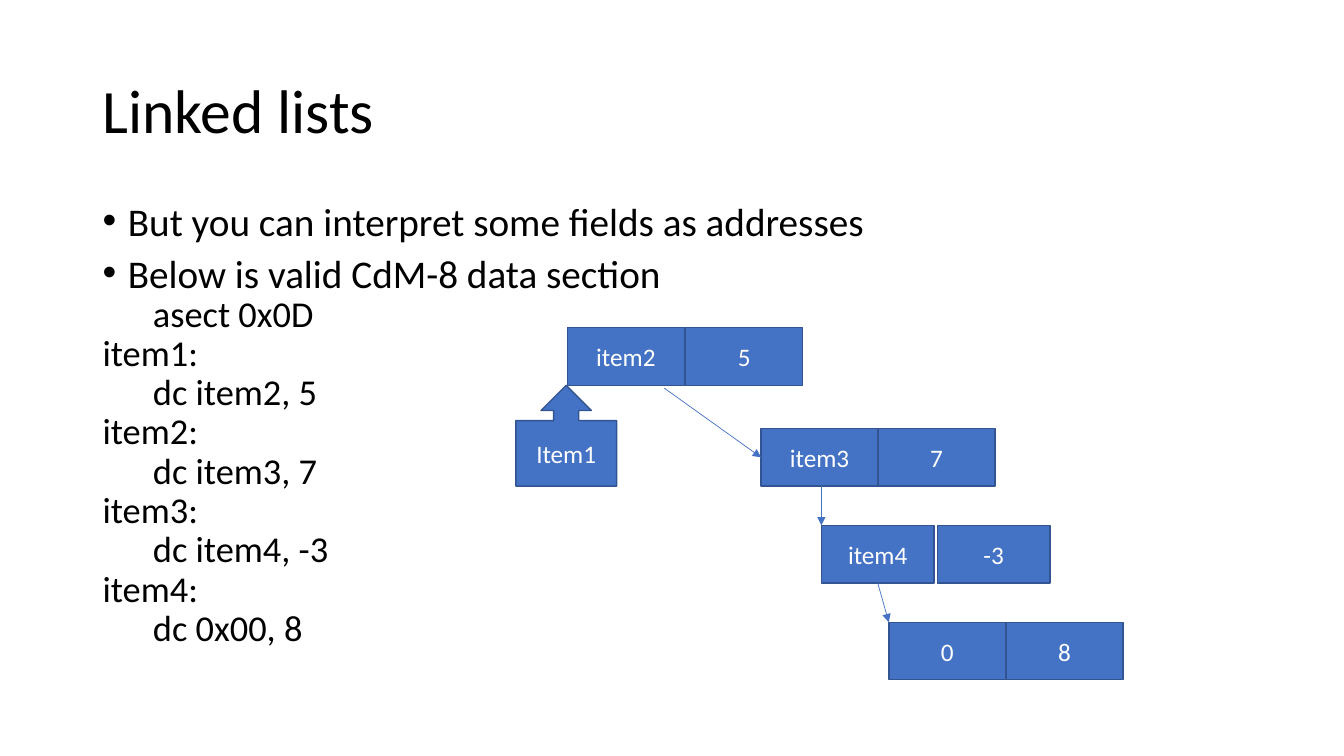
from lxml.etree import SubElement
from pptx import Presentation
from pptx.dml.color import RGBColor
from pptx.enum.shapes import MSO_CONNECTOR, MSO_SHAPE
from pptx.enum.text import MSO_ANCHOR, MSO_AUTO_SIZE, PP_ALIGN
from pptx.oxml.ns import qn
from pptx.util import Cm, Pt

COLOURS = {"text": "000000", "node": "4472C4", "edge": "325491", "label": "FFFFFF"}
FORMATS = {
    "title": {"size": Pt(44), "name": "Calibri"},
    "bullet": {"size": Pt(28), "name": "Calibri"},
    "code": {"size": Pt(26), "name": "Calibri"},
    "label": {"size": Pt(18), "name": "Calibri"},
}
SPACING = {
    "title": {"line_spacing": 0.9, "alignment": PP_ALIGN.LEFT},
    "bullet": {"line_spacing": 0.8, "space_before": Pt(10)},
    "code": {"line_spacing": 0.9, "space_before": Pt(0)},
    "label": {"alignment": PP_ALIGN.CENTER},
}
INDENTS = {"bullet": (Cm(0.64), Cm(-0.64)), "code": (0, 0)}
BULLETS = ["But you can interpret some fields as addresses",
           "Below is valid CdM-8 data section"]
ITEMS = [("item1", "item2, 5"), ("item2", "item3, 7"),
         ("item3", "item4, -3"), ("item4", "0x00, 8")]
NODE_HEIGHT = 1.45
NODES = [
    {"left": 0, "top": 0, "width": 2.95, "gap": 0.03, "fields": ("item2", "5")},
    {"left": 4.88, "top": 2.54, "width": 2.95, "gap": 0, "fields": ("item3", "7")},
    {"left": 6.4, "top": 4.98, "width": 2.84, "gap": 0.08, "fields": ("item4", "-3")},
    {"left": 8.1, "top": 7.42, "width": 2.95, "gap": 0, "fields": ("0", "8")},
]


def colour(name):
    """Return the named colour."""
    return RGBColor.from_string(COLOURS[name])


def set_attributes(target, values):
    """Set every attribute in values on target."""
    for name, value in values.items():
        setattr(target, name, value)


def write_paragraph(para, text, kind, colour_name="text"):
    """Write one formatted span of text into a paragraph."""
    set_attributes(para, SPACING[kind])
    span = para.add_run()
    span.text = text
    set_attributes(span.font, FORMATS[kind])
    span.font.color.rgb = colour(colour_name)


def place(shape, box):
    """Move a shape to a box given in centimetres."""
    names = ("left", "top", "width", "height")
    set_attributes(shape, {name: Cm(value) for name, value in zip(names, box)})


def fill_title(page, box):
    """Place and write the title."""
    title = page.shapes.title
    place(title, box)
    set_attributes(title.text_frame, {"vertical_anchor": MSO_ANCHOR.MIDDLE,
                                      "auto_size": MSO_AUTO_SIZE.NONE})
    write_paragraph(title.text_frame.paragraphs[0], "Linked lists", "title")


def fill_body(page, box):
    """Place the body and write the bullets and the data section."""
    body = page.placeholders[1]
    place(body, box)
    frame = body.text_frame
    frame.auto_size = MSO_AUTO_SIZE.NONE
    lines = [(text, "bullet") for text in BULLETS] + [("\tasect 0x0D", "code")]
    for name, values in ITEMS:
        lines += [(f"{name}:", "code"), (f"\tdc {values}", "code")]
    for index, (text, kind) in enumerate(lines):
        para = frame.add_paragraph() if index else frame.paragraphs[0]
        write_paragraph(para, text, kind)
        properties = para._p.get_or_add_pPr()
        margin, indent = INDENTS[kind]
        properties.set("marL", str(margin))
        properties.set("indent", str(indent))
        if kind == "bullet":
            SubElement(properties, qn("a:buFont"), typeface="Arial")
            SubElement(properties, qn("a:buChar"), char="•")
        else:
            SubElement(properties, qn("a:buNone"))


def add_block(page, kind, box, text):
    """Add a filled shape with a centred label."""
    block = page.shapes.add_shape(kind, *map(Cm, box))
    block.shadow.inherit = False
    block.fill.solid()
    block.fill.fore_color.rgb = colour("node")
    block.line.color.rgb = colour("edge")
    block.line.width = Pt(1)
    block.text_frame.word_wrap = True
    block.text_frame.vertical_anchor = MSO_ANCHOR.MIDDLE
    write_paragraph(block.text_frame.paragraphs[0], text, "label", "label")


def add_arrow(page, start, end):
    """Add a thin arrow between two points."""
    arrow = page.shapes.add_connector(MSO_CONNECTOR.STRAIGHT, *map(Cm, start + end))
    arrow.line.color.rgb = colour("node")
    arrow.line.width = Pt(0.5)
    SubElement(arrow.line._get_or_add_ln(), qn("a:tailEnd"), type="triangle")
    SubElement(arrow._element.spPr, qn("a:effectLst"))


def draw_list(page, box):
    """Draw the nodes, the head pointer and the links inside a box."""
    left, top = box[:2]
    for node in NODES:
        for column, text in enumerate(node["fields"]):
            x = left + node["left"] + column * (node["width"] + node["gap"])
            add_block(page, MSO_SHAPE.RECTANGLE,
                      (x, top + node["top"], node["width"], NODE_HEIGHT), text)
    add_block(page, MSO_SHAPE.UP_ARROW_CALLOUT,
              (left - 1.3, top + NODE_HEIGHT, 2.54, 2.54), "Item1")
    links = [((2.44, 1.52), (4.88, 2.54 + NODE_HEIGHT / 2)),
             ((6.4, 2.54 + NODE_HEIGHT), (6.4, 4.98)),
             ((7.82, 4.98 + NODE_HEIGHT), (8.1, 7.42))]
    for start, end in links:
        add_arrow(page, (left + start[0], top + start[1]),
                  (left + end[0], top + end[1]))


def main():
    """Build and save the slide."""
    deck = Presentation()
    set_attributes(deck, {"slide_width": Cm(33.87), "slide_height": Cm(19.05)})
    page = deck.slides.add_slide(deck.slide_layouts[1])
    fill_title(page, (2.33, 1.01, 29.21, 3.68))
    fill_body(page, (2.33, 5.07, 29.21, 12.09))
    draw_list(page, (14.3, 8.26, 14, 8.87))
    deck.save("out.pptx")


if __name__ == "__main__":
    main()
